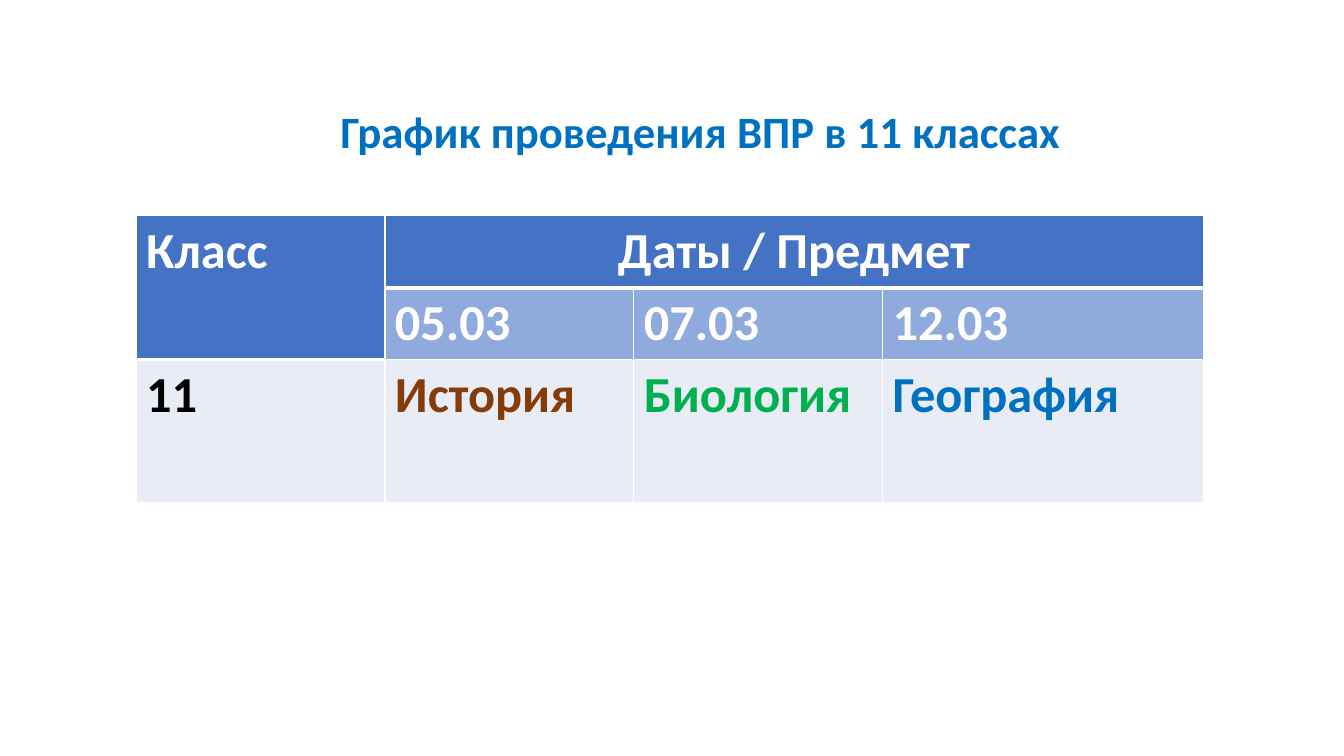
"""Build a slide with the test schedule for grade 11."""
from lxml import etree
from pptx import Presentation
from pptx.dml.color import RGBColor
from pptx.enum.text import MSO_AUTO_SIZE, PP_ALIGN
from pptx.oxml.ns import qn
from pptx.util import Cm, Pt

CENTER = PP_ALIGN.CENTER
LEFT = PP_ALIGN.LEFT
FIT_SHAPE = MSO_AUTO_SIZE.SHAPE_TO_FIT_TEXT

WHITE = RGBColor(0xFF, 0xFF, 0xFF)
BLACK = RGBColor(0x00, 0x00, 0x00)
BLUE = RGBColor(0x00, 0x70, 0xC0)
BROWN = RGBColor(0x84, 0x3C, 0x0B)
GREEN = RGBColor(0x00, 0xB0, 0x50)
HEADER_FILL = RGBColor(0x44, 0x72, 0xC4)
DATE_FILL = RGBColor(0x8F, 0xAA, 0xDC)
SUBJECT_FILL = RGBColor(0xE9, 0xEB, 0xF5)


def add_text(paragraph, text, size, color, alignment=LEFT):
    paragraph.alignment = alignment
    run = paragraph.add_run()
    run.text = text
    run.font.name = "Calibri"
    run.font.size = Pt(size)
    run.font.bold = True
    run.font.color.rgb = color


def set_borders(cell, top, bottom):
    properties = cell._tc.get_or_add_tcPr()
    widths = {"a:lnL": 1, "a:lnR": 1, "a:lnT": top, "a:lnB": bottom}
    for position, (tag, width) in enumerate(widths.items()):
        line = etree.Element(qn(tag), w=str(Pt(width)))
        fill = etree.SubElement(line, qn("a:solidFill"))
        etree.SubElement(fill, qn("a:srgbClr"), val=str(WHITE))
        properties.insert(position, line)


prs = Presentation()
prs.slide_width = Cm(33.87)
prs.slide_height = Cm(19.05)
slide = prs.slides.add_slide(prs.slide_layouts[6])

column_widths = [6.27, 6.27, 6.27, 8.08]
row_heights = [1.7, 1.7, 3.6]
schedule = slide.shapes.add_table(
    3, 4, Cm(3.43), Cm(5.44), Cm(sum(column_widths)), Cm(sum(row_heights))
).table
for column, width in zip(schedule.columns, column_widths):
    column.width = Cm(width)
for row, height in zip(schedule.rows, row_heights):
    row.height = Cm(height)

schedule.cell(0, 0).merge(schedule.cell(1, 0))
schedule.cell(0, 1).merge(schedule.cell(0, 3))

row_fills = [HEADER_FILL, DATE_FILL, SUBJECT_FILL]
for row_index, row_fill in enumerate(row_fills):
    for column_index in range(4):
        cell = schedule.cell(row_index, column_index)
        in_grade_header = column_index == 0 and row_index < 2
        cell.fill.solid()
        cell.fill.fore_color.rgb = HEADER_FILL if in_grade_header else row_fill
        header_rows = 2 if column_index == 0 else 1
        set_borders(
            cell,
            top=3 if row_index == header_rows else 1,
            bottom=3 if row_index < header_rows else 1,
        )

entries = [
    (0, 0, "Класс", WHITE, LEFT),
    (0, 1, "Даты / Предмет", WHITE, CENTER),
    (1, 1, "05.03", WHITE, LEFT),
    (1, 2, "07.03", WHITE, LEFT),
    (1, 3, "12.03", WHITE, LEFT),
    (2, 0, "11", BLACK, LEFT),
    (2, 1, "История", BROWN, LEFT),
    (2, 2, "Биология", GREEN, LEFT),
    (2, 3, "География", BLUE, LEFT),
]
for row_index, column_index, text, color, alignment in entries:
    paragraph = schedule.cell(row_index, column_index).text_frame.paragraphs[0]
    add_text(paragraph, text, 36, color, alignment)

title = slide.shapes.add_textbox(Cm(8.33), Cm(2.49), Cm(18.85), Cm(1.63)).text_frame
title.word_wrap = False
title.auto_size = FIT_SHAPE
add_text(title.paragraphs[0], "График проведения ВПР в 11 классах", 32, BLUE)

prs.save("out.pptx")
